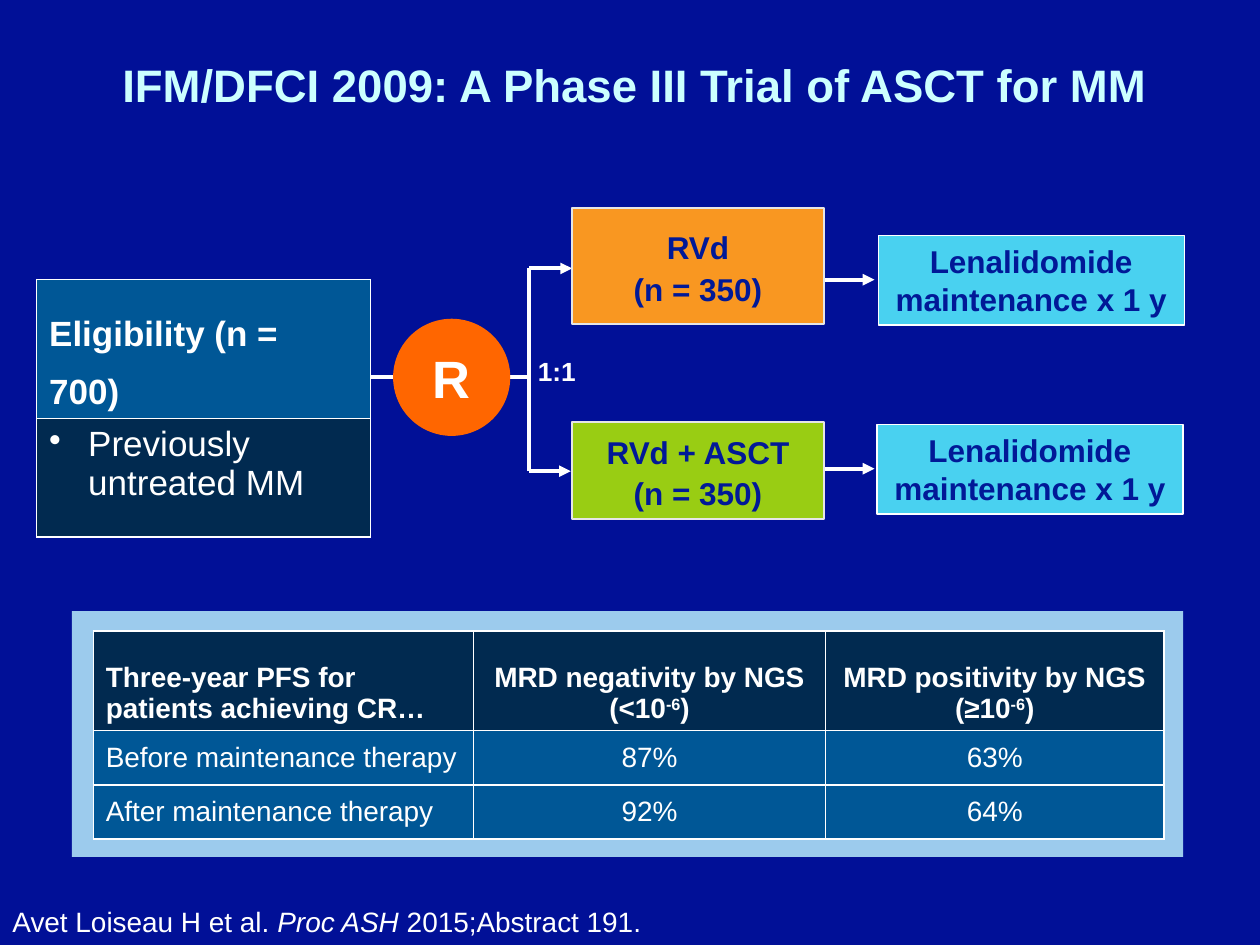
from dataclasses import dataclass

from lxml.etree import SubElement
from pptx import Presentation
from pptx.dml.color import RGBColor
from pptx.enum.shapes import MSO_CONNECTOR, MSO_SHAPE
from pptx.enum.text import MSO_ANCHOR as Anchor, MSO_AUTO_SIZE as AutoSize, PP_ALIGN as Align
from pptx.oxml.ns import qn
from pptx.util import Inches, Pt

WHITE = RGBColor(0xFF, 0xFF, 0xFF)
PALE_GRAY = RGBColor(0xE6, 0xE6, 0xE6)
BACKGROUND = RGBColor(0x01, 0x10, 0x97)
TITLE_CYAN = RGBColor(0xCC, 0xFF, 0xFF)
TEXT_BLUE = RGBColor(0x01, 0x19, 0x97)
SKY = RGBColor(0x49, 0xD1, 0xF0)
ORANGE = RGBColor(0xF9, 0x97, 0x21)
GREEN = RGBColor(0x99, 0xCD, 0x13)
RED_ORANGE = RGBColor(0xFF, 0x66, 0x00)
PANEL_BLUE = RGBColor(0x9C, 0xCB, 0xED)
NAVY = RGBColor(0x01, 0x2A, 0x50)
MID_BLUE = RGBColor(0x00, 0x57, 0x96)


@dataclass
class Style:
    size: float
    color: RGBColor = WHITE
    bold: bool = False
    align: Align = Align.LEFT
    spacing: float = 1.0


@dataclass
class Run:
    text: str
    italic: bool = False
    superscript: bool = False


@dataclass
class Box:
    left: float
    top: float
    width: float
    height: float
    fill: RGBColor
    lines: tuple = ()
    style: Style | None = None
    outline: RGBColor | None = None
    outline_width: float = 1
    anchor: Anchor = Anchor.MIDDLE
    kind: MSO_SHAPE = MSO_SHAPE.RECTANGLE
    wrap: bool = True


@dataclass
class Line:
    start: tuple[float, float]
    end: tuple[float, float]
    arrow: bool = True


def write(frame, lines: tuple, style: Style) -> None:
    """Each line is a string or a tuple of Run objects."""
    for index, line in enumerate(lines):
        paragraph = frame.paragraphs[0] if index == 0 else frame.add_paragraph()
        paragraph.alignment = style.align
        paragraph.line_spacing = style.spacing
        for part in (Run(line),) if isinstance(line, str) else line:
            run = paragraph.add_run()
            run.text = part.text
            font = run.font
            font.name, font.size = "Arial", Pt(style.size)
            font.bold, font.italic = style.bold, part.italic
            font.color.rgb = style.color
            if part.superscript:
                run._r.get_or_add_rPr().set("baseline", "30000")


def add_box(slide, box: Box) -> None:
    shape = slide.shapes.add_shape(box.kind, Inches(box.left), Inches(box.top),
                                   Inches(box.width), Inches(box.height))
    shape.shadow.inherit = False
    shape.fill.solid()
    shape.fill.fore_color.rgb = box.fill
    if box.outline is None:
        shape.line.fill.background()
    else:
        shape.line.color.rgb = box.outline
        shape.line.width = Pt(box.outline_width)
    shape.text_frame.word_wrap = box.wrap
    shape.text_frame.vertical_anchor = box.anchor
    if box.style:
        write(shape.text_frame, box.lines, box.style)


def add_line(slide, line: Line) -> None:
    connector = slide.shapes.add_connector(
        MSO_CONNECTOR.STRAIGHT, *(Inches(value) for value in line.start + line.end))
    connector.line.color.rgb = WHITE
    connector.line.width = Pt(2.25)
    if line.arrow:
        SubElement(connector.line._get_or_add_ln(), qn("a:tailEnd"), type="triangle")
    SubElement(connector._element.spPr, qn("a:effectLst"))


def add_text(slide, left: float, top: float, width: float, height: float,
             line, style: Style, wrap: bool = True) -> None:
    frame = slide.shapes.add_textbox(Inches(left), Inches(top), Inches(width),
                                     Inches(height)).text_frame
    frame.word_wrap = wrap
    write(frame, (line,), style)


def add_grid(slide, left: float, top: float, columns: tuple, rows: tuple):
    table = slide.shapes.add_table(len(rows), len(columns), Inches(left), Inches(top),
                                   Inches(sum(columns)), Inches(sum(rows))).table
    for column, width in zip(table.columns, columns):
        column.width = Inches(width)
    for row, height in zip(table.rows, rows):
        row.height = Inches(height)
    return table


def fill_cell(cell, lines: tuple, style: Style, fill: RGBColor, anchor: Anchor) -> None:
    properties = cell._tc.get_or_add_tcPr()
    for side in ("a:lnL", "a:lnR", "a:lnT", "a:lnB"):
        border = SubElement(properties, qn(side), w=str(Pt(1)))
        SubElement(SubElement(border, qn("a:solidFill")), qn("a:srgbClr"), val=str(WHITE))
    cell.fill.solid()
    cell.fill.fore_color.rgb = fill
    cell.vertical_anchor = anchor
    write(cell.text_frame, lines, style)


def add_eligibility(slide) -> None:
    table = add_grid(slide, 0.29, 2.22, (2.65,), (0.46, 0.94))
    header, criterion = table.cell(0, 0), table.cell(1, 0)
    fill_cell(header, ("Eligibility (n = 700)",), Style(20, bold=True, spacing=1.5),
              MID_BLUE, Anchor.BOTTOM)
    fill_cell(criterion, ("Previously untreated MM",), Style(20), NAVY, Anchor.TOP)
    for cell in (header, criterion):
        cell.text_frame.paragraphs[0].space_before = Pt(6)
    header.text_frame.paragraphs[0].space_after = Pt(6)
    bullet = criterion.text_frame.paragraphs[0]._p.get_or_add_pPr()
    bullet.set("marL", str(Inches(0.31)))
    bullet.set("indent", str(Inches(-0.31)))
    SubElement(bullet, qn("a:buChar"), char="•")


def mrd_header(status: str, sign: str) -> tuple:
    return (f"MRD {status} by NGS",
            (Run(f"({sign}10"), Run("-6", superscript=True), Run(")")))


def add_results(slide) -> None:
    rows = (
        (("Three-year PFS for patients achieving CR…",),
         mrd_header("negativity", "<"), mrd_header("positivity", "≥")),
        (("Before maintenance therapy",), ("87%",), ("63%",)),
        (("After maintenance therapy",), ("92%",), ("64%",)),
    )
    table = add_grid(slide, 0.74, 5.01, (3.02, 2.79, 2.69), (0.79, 0.43, 0.43))
    for r, row in enumerate(rows):
        for c, lines in enumerate(row):
            style = Style(16, bold=r == 0, align=Align.CENTER if c else Align.LEFT)
            fill_cell(table.cell(r, c), lines, style, MID_BLUE if r else NAVY,
                      Anchor.MIDDLE if r else Anchor.BOTTOM)


def main() -> None:
    presentation = Presentation()
    presentation.slide_width, presentation.slide_height = Inches(10), Inches(7.5)
    slide = presentation.slides.add_slide(presentation.slide_layouts[5])
    slide.background.fill.solid()
    slide.background.fill.fore_color.rgb = BACKGROUND

    # Title and citation
    title = slide.shapes.title
    title.left, title.top, title.width, title.height = map(Inches, (0.25, 0, 9.58, 1.4))
    title.text_frame.auto_size = AutoSize.NONE
    title.text_frame.vertical_anchor = Anchor.MIDDLE
    write(title.text_frame, ("IFM/DFCI 2009: A Phase III Trial of ASCT for MM",),
          Style(26, TITLE_CYAN, True, Align.CENTER, 0.9))
    add_text(slide, 0, 7.13, 9.78, 0.37,
             (Run("Avet Loiseau H et al. "), Run("Proc ASH ", italic=True),
              Run("2015;Abstract 191.")), Style(16))

    # Randomization and branches
    for line in (Line((2.7, 2.99), (4.2, 2.99), arrow=False),
                 Line((4.2, 2.13), (4.2, 3.74), arrow=False),
                 Line((4.2, 2.13), (4.54, 2.13)), Line((4.2, 3.74), (4.53, 3.74)),
                 Line((6.51, 2.22), (6.94, 2.22)), Line((6.51, 3.72), (6.94, 3.72))):
        add_line(slide, line)
    add_box(slide, Box(3.12, 2.53, 0.93, 0.93, RED_ORANGE, ("R",),
                       Style(30, bold=True, align=Align.CENTER),
                       kind=MSO_SHAPE.OVAL, wrap=False))
    add_text(slide, 4.17, 2.77, 0.51, 0.35, "1:1", Style(15, bold=True), wrap=False)
    add_eligibility(slide)

    # Treatment arms and maintenance
    arm = Style(18, TEXT_BLUE, True, Align.CENTER, 1.1)
    maintenance = Style(18, TEXT_BLUE, True, Align.CENTER)
    for name, top, height, fill in (("RVd", 1.65, 0.92, ORANGE),
                                    ("RVd + ASCT", 3.35, 0.77, GREEN)):
        add_box(slide, Box(4.54, top, 2, height, fill, (name, "(n = 350)"), arm, PALE_GRAY))
    for left, top in ((6.97, 1.87), (6.96, 3.37)):
        add_box(slide, Box(left, top, 2.43, 0.71, SKY, ("Lenalidomide maintenance x 1 y",),
                           maintenance, WHITE, 0.75, Anchor.TOP))

    # Results on their panel
    add_box(slide, Box(0.57, 4.85, 8.82, 1.95, PANEL_BLUE))
    add_results(slide)
    presentation.save("out.pptx")


if __name__ == "__main__":
    main()
